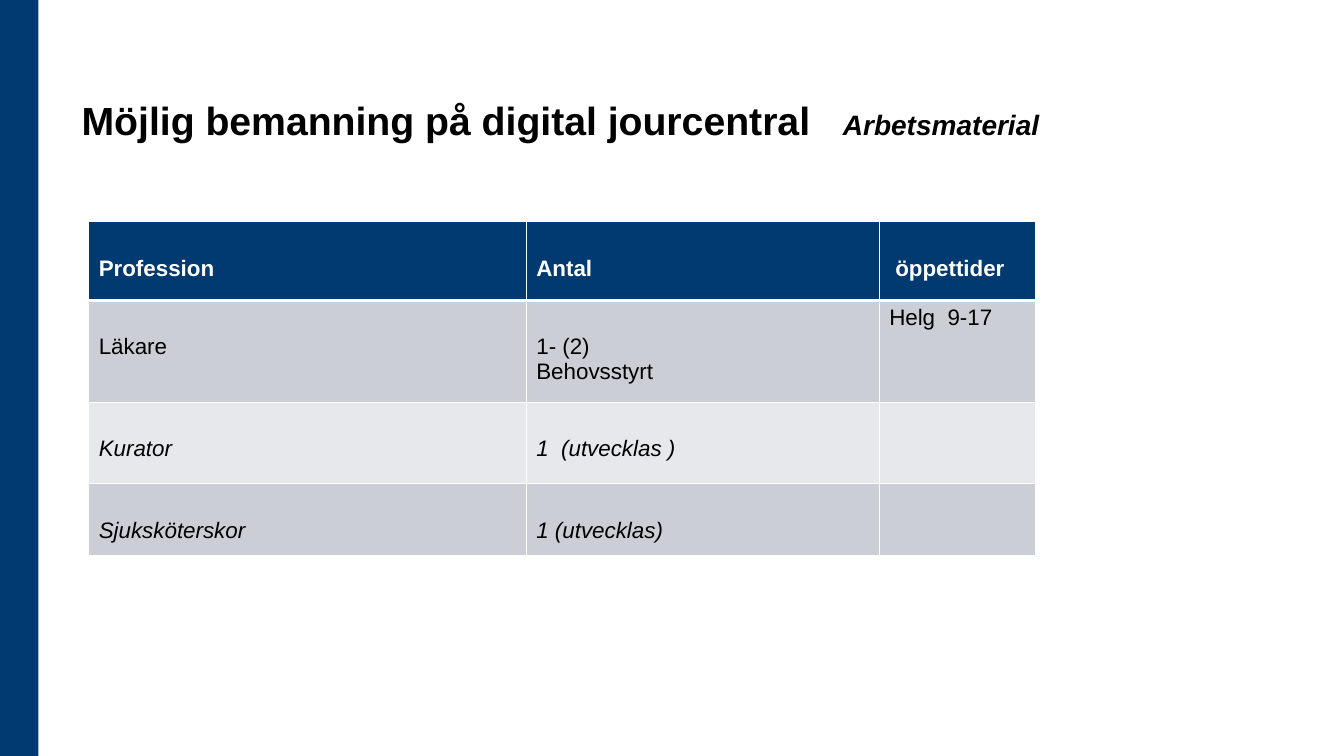
import pptx
import pptx.util
import pptx.dml.color
import pptx.enum.shapes
import pptx.enum.text
import pptx.oxml
import pptx.oxml.ns

COLORS = {"navy": "003A70", "white": "FFFFFF", "black": "000000",
          "dark band": "CCCED5", "light band": "E7E8EB"}
FONT = "Arial"
TITLE = [("Möjlig bemanning på digital jourcentral", 28, False),
         ("\tArbetsmaterial", 20, True)]
HEADINGS = ["Profession", "Antal", "öppettider"]
STAFFING = [
    ["Läkare", "1- (2)\nBehovsstyrt", "Helg  9-17"],
    ["Kurator", "1  (utvecklas )", ""],
    ["Sjuksköterskor", "1 (utvecklas)", ""],
]
COLUMN_WIDTHS = [4.34, 3.5, 1.55]
ROW_HEIGHTS = [0.78, 1.01, 0.81, 0.71]
Inches = pptx.util.Inches


def rgb(name):
    return pptx.dml.color.RGBColor.from_string(COLORS[name])


def add_run(paragraph, text, size, color, bold=False, italic=False):
    run = paragraph.add_run()
    run.text = text
    run.font.name = FONT
    run.font.size = pptx.util.Pt(size)
    run.font.bold = bold
    run.font.italic = italic
    run.font.color.rgb = rgb(color)


def add_borders(cell, bottom_width):
    properties = cell._tc.get_or_add_tcPr()
    widths = {"lnL": 1, "lnR": 1, "lnT": 1, "lnB": bottom_width}
    for position, (side, width) in enumerate(widths.items()):
        border = pptx.oxml.parse_xml(
            f'<a:{side} {pptx.oxml.ns.nsdecls("a")} w="{pptx.util.Pt(width)}">'
            f'<a:solidFill><a:srgbClr val="{COLORS["white"]}"/></a:solidFill></a:{side}>')
        properties.insert(position, border)


def add_title(slide):
    title = slide.shapes.title
    title.left, title.top = Inches(0.71), Inches(0.16)
    title.width, title.height = Inches(10.59), Inches(1.31)
    frame = title.text_frame
    frame.auto_size = pptx.enum.text.MSO_AUTO_SIZE.NONE
    frame.vertical_anchor = pptx.enum.text.MSO_ANCHOR.BOTTOM
    heading = frame.paragraphs[0]
    heading.alignment = pptx.enum.text.PP_ALIGN.LEFT
    heading._p.get_or_add_pPr().append(pptx.oxml.parse_xml(
        f'<a:tabLst {pptx.oxml.ns.nsdecls("a")}>'
        f'<a:tab pos="{Inches(7.55)}" algn="l"/></a:tabLst>'))
    for text, size, italic in TITLE:
        add_run(heading, text, size, "black", bold=True, italic=italic)


def add_staffing(slide):
    rows = [HEADINGS] + STAFFING
    table = slide.shapes.add_table(
        len(rows), len(HEADINGS), Inches(0.88), Inches(2.2),
        Inches(sum(COLUMN_WIDTHS)), Inches(sum(ROW_HEIGHTS))).table
    for column, width in zip(table.columns, COLUMN_WIDTHS):
        column.width = Inches(width)
    for row, height in zip(table.rows, ROW_HEIGHTS):
        row.height = Inches(height)
    for r, texts in enumerate(rows):
        header = r == 0
        band = "navy" if header else ("light band", "dark band")[r % 2]
        for c, text in enumerate(texts):
            cell = table.cell(r, c)
            cell.fill.solid()
            cell.fill.fore_color.rgb = rgb(band)
            add_borders(cell, 3 if header else 1)
            opening_hours = c == len(HEADINGS) - 1
            cell.margin_top = Inches(0.05 if opening_hours and not header else 0.34)
            cell.margin_left = Inches(0.16 if opening_hours and header else 0.1)
            if not text:
                continue
            for i, line in enumerate(text.split("\n")):
                frame = cell.text_frame
                paragraph = frame.add_paragraph() if i else frame.paragraphs[0]
                add_run(paragraph, line, 16, "white" if header else "black",
                        bold=header, italic=r > 1)


def main():
    deck = pptx.Presentation()
    deck.slide_width, deck.slide_height = Inches(13.33), Inches(7.5)
    slide = deck.slides.add_slide(deck.slide_layouts[5])
    side_band = slide.shapes.add_shape(
        pptx.enum.shapes.MSO_SHAPE.RECTANGLE, 0, 0, Inches(0.38), deck.slide_height)
    side_band.shadow.inherit = False
    side_band.fill.solid()
    side_band.fill.fore_color.rgb = rgb("navy")
    side_band.line.fill.background()
    add_title(slide)
    add_staffing(slide)
    deck.save("out.pptx")


if __name__ == "__main__":
    main()
